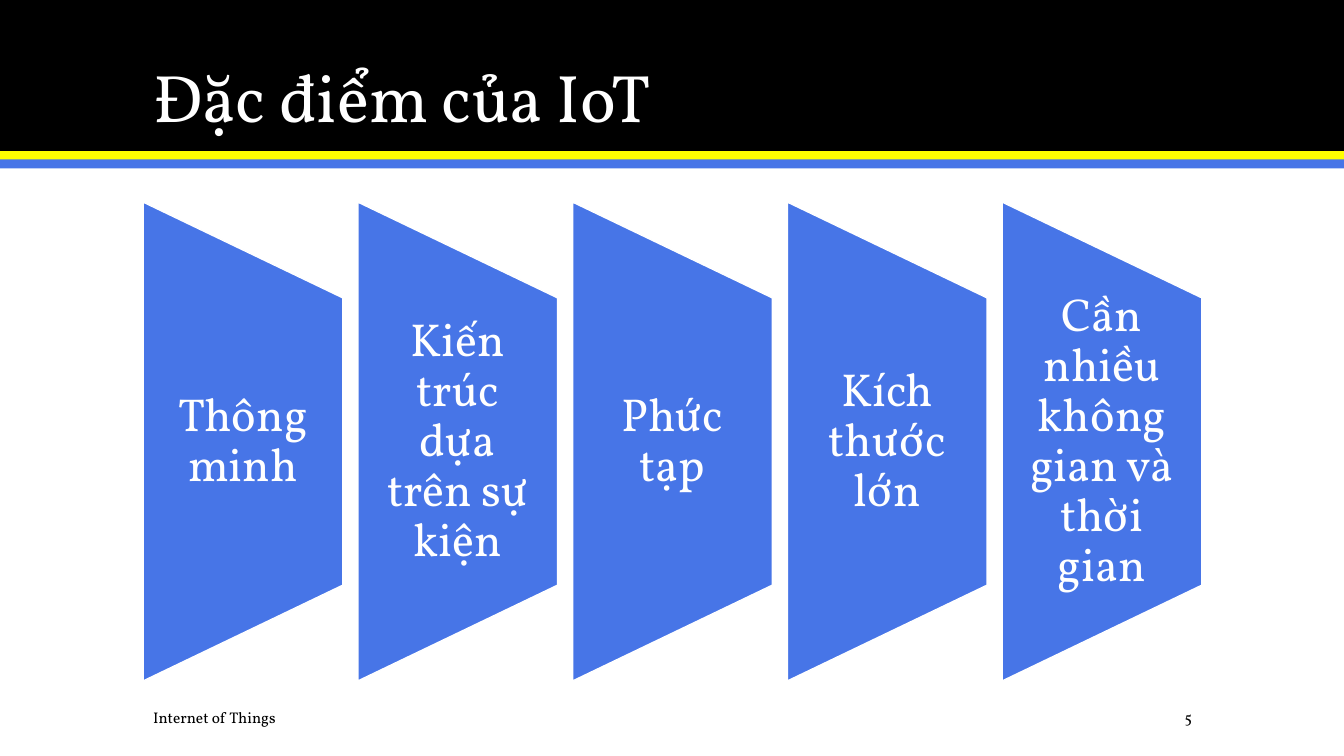
from pptx import Presentation, util as u
from pptx.dml.color import RGBColor
from pptx.enum import shapes, text

COLORS = {"black": "000000", "yellow": "FFFF00", "blue": "4775E7", "white": "FFFFFF"}
FONT = "Vollkorn"
WIDTH, HEIGHT = 13.33, 7.5
LEFT, CONTENT_WIDTH = 1.42, 10.5
PANEL_WIDTH, PANEL_HEIGHT, PANEL_MIDDLE = 1.98, 4.75, 4.38
FOOTER_TOP, FOOTER_HEIGHT = 6.97, 0.3


def add_figure(page, kind, left, top, width, height, color):
    figure = page.shapes.add_shape(
        kind, u.Inches(left), u.Inches(top), u.Inches(width), u.Inches(height))
    figure.shadow.inherit = False
    figure.fill.solid()
    figure.fill.fore_color.rgb = RGBColor.from_string(COLORS[color])
    figure.line.fill.background()
    return figure


def add_label(page, words, left, top, width, height, size, color, align, anchor):
    box = page.shapes.add_textbox(
        u.Inches(left), u.Inches(top), u.Inches(width), u.Inches(height))
    frame = box.text_frame
    frame.word_wrap = True
    frame.vertical_anchor = anchor
    para = frame.paragraphs[0]
    para.text = words
    para.alignment = align
    para.font.name = FONT
    para.font.size = u.Pt(size)
    para.font.color.rgb = RGBColor.from_string(COLORS[color])
    return frame


deck = Presentation()
deck.slide_width, deck.slide_height = u.Inches(WIDTH), u.Inches(HEIGHT)
page = deck.slides.add_slide(deck.slide_layouts[6])

bands = [("black", 0, 1.5), ("yellow", 1.5, 0.09), ("blue", 1.58, 0.09)]
for color, top, height in bands:
    add_figure(page, shapes.MSO_SHAPE.RECTANGLE, 0, top, WIDTH, height, color)

title = add_label(page, "Đặc điểm của IoT", LEFT, 0.28, CONTENT_WIDTH, 1.13, 48,
                  "white", text.PP_ALIGN.LEFT, text.MSO_ANCHOR.BOTTOM)
title.paragraphs[0].line_spacing = 0.9

features = ["Thông minh", "Kiến trúc dựa trên sự kiện", "Phức tạp",
            "Kích thước lớn", "Cần nhiều không gian và thời gian"]
pitch = (CONTENT_WIDTH - PANEL_WIDTH) / (len(features) - 1)
label_height = PANEL_HEIGHT * 0.6
for column, feature in enumerate(features):
    left = LEFT + column * pitch
    panel = add_figure(page, shapes.MSO_SHAPE.FLOWCHART_MANUAL_OPERATION,
                       left + (PANEL_WIDTH - PANEL_HEIGHT) / 2,
                       PANEL_MIDDLE - PANEL_WIDTH / 2,
                       PANEL_HEIGHT, PANEL_WIDTH, "blue")
    panel.rotation = 270
    panel.line.color.rgb = RGBColor.from_string(COLORS["white"])
    panel.line.width = u.Pt(1)
    label = add_label(page, feature, left, PANEL_MIDDLE - label_height / 2,
                      PANEL_WIDTH, label_height, 33, "white",
                      text.PP_ALIGN.CENTER, text.MSO_ANCHOR.MIDDLE)
    label.margin_left = label.margin_right = u.Inches(0.23)
    label.margin_top = label.margin_bottom = 0
    label.paragraphs[0].line_spacing = 0.9

footers = [("5", 10.42, 1.5, text.PP_ALIGN.RIGHT),
           ("Internet of Things", LEFT, 6.83, text.PP_ALIGN.LEFT)]
for words, left, width, align in footers:
    add_label(page, words, left, FOOTER_TOP, width, FOOTER_HEIGHT, 11,
              "black", align, text.MSO_ANCHOR.MIDDLE)

deck.save("out.pptx")
